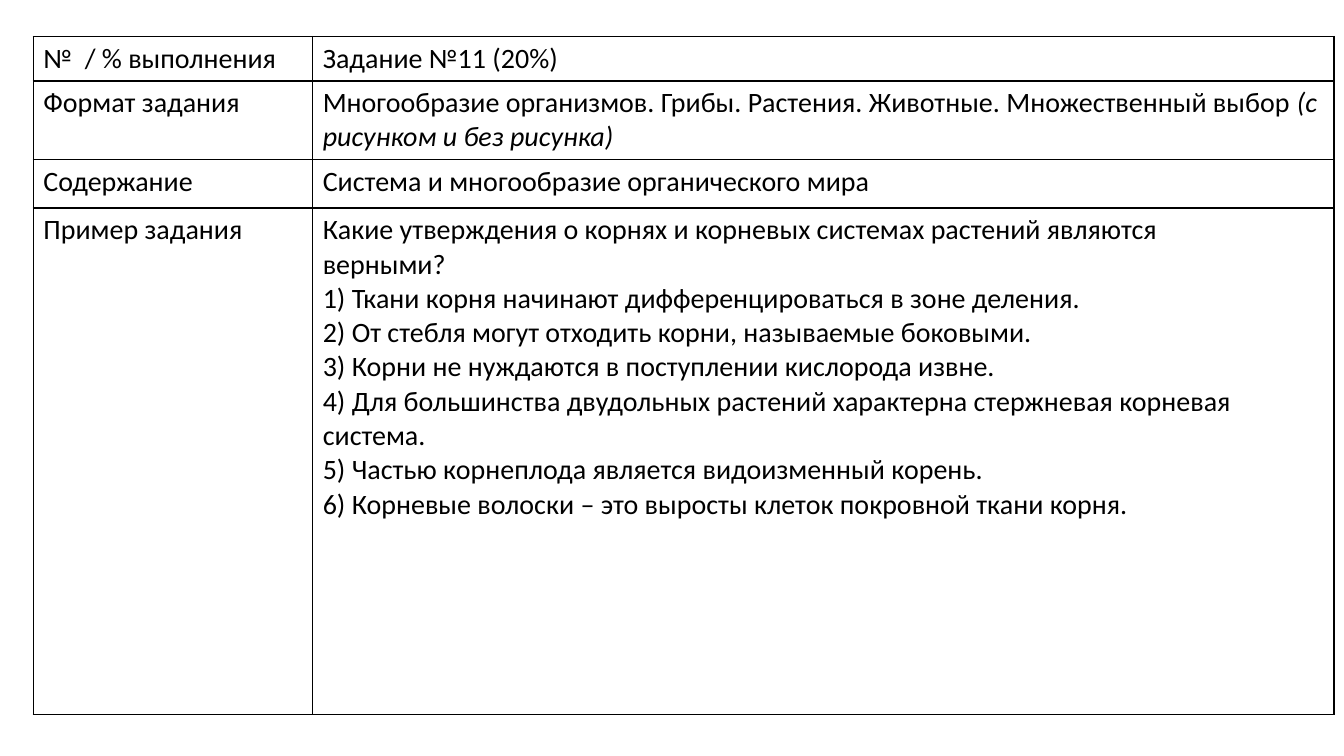
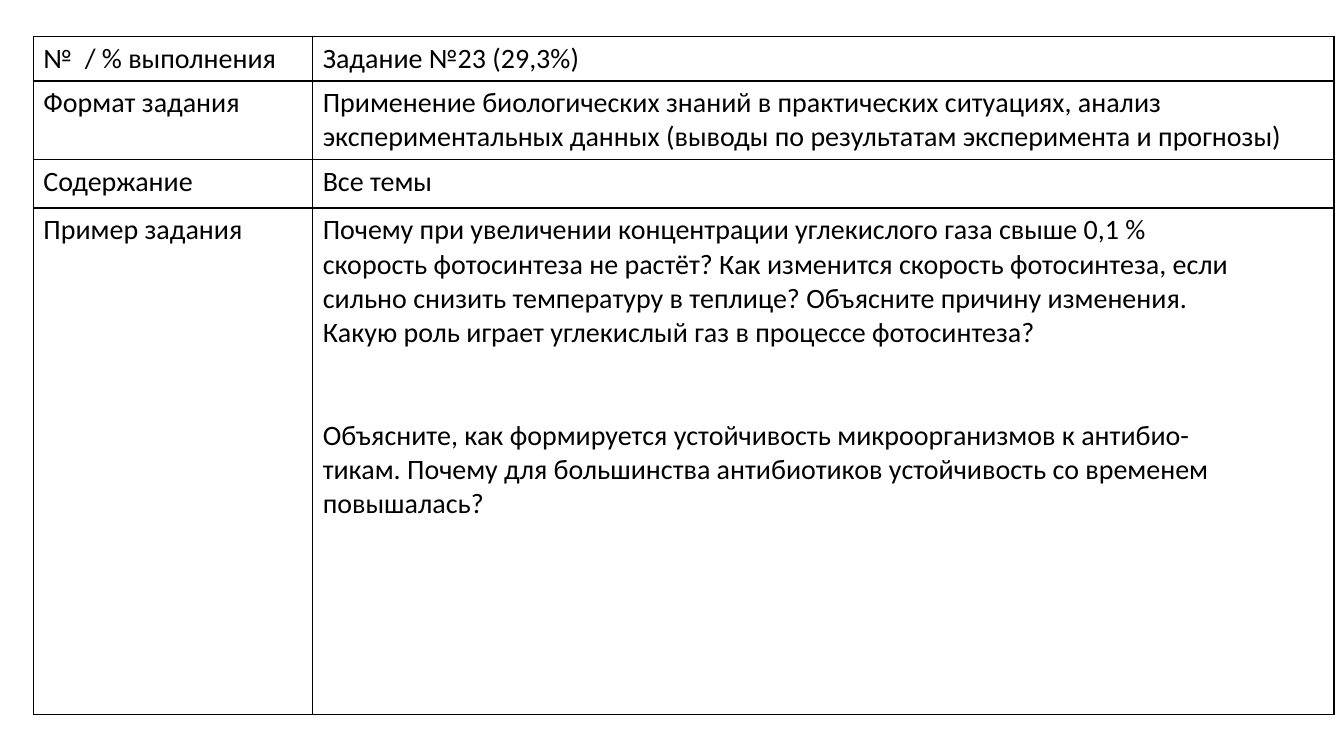
from dataclasses import dataclass

from lxml import etree
from pptx import Presentation
from pptx import util as u
from pptx.dml.color import RGBColor
from pptx.oxml import ns

BLACK = RGBColor(0x00, 0x00, 0x00)
FONT = "Calibri"
FONT_SIZE = u.Pt(20)
BORDER_WIDTH = u.Pt(1)
PARAGRAPH_GAP = u.Pt(48.8)

TABLE_LEFT, TABLE_TOP = u.Cm(0.84), u.Cm(0.92)
COLUMN_WIDTHS = (u.Cm(7.04), u.Cm(25.74))
ROW_HEIGHTS = (u.Cm(1.05), u.Cm(1.95), u.Cm(1.22), u.Cm(12.77))
ROW_LABELS = ("№  / % выполнения", "Формат задания", "Содержание", "Пример задания")


@dataclass(frozen=True)
class Line:
    text: str
    italic_ending: str = ""
    gap_before: bool = False


@dataclass(frozen=True)
class Task:
    number: Line
    task_format: Line
    content: Line
    example: tuple[Line, ...]

    def rows(self) -> list[tuple[Line, ...]]:
        return [(self.number,), (self.task_format,), (self.content,), self.example]


TASKS = (
    Task(
        number=Line("Задание №11 (20%)"),
        task_format=Line(
            "Многообразие организмов. Грибы. Растения. Животные. Множественный выбор ",
            italic_ending="(с рисунком и без рисунка)",
        ),
        content=Line("Система и многообразие органического мира"),
        example=(
            Line("Какие утверждения о корнях и корневых системах растений являются"),
            Line("верными?"),
            Line("1) Ткани корня начинают дифференцироваться в зоне деления."),
            Line("2) От стебля могут отходить корни, называемые боковыми."),
            Line("3) Корни не нуждаются в поступлении кислорода извне."),
            Line("4) Для большинства двудольных растений характерна стержневая корневая"),
            Line("система."),
            Line("5) Частью корнеплода является видоизменный корень."),
            Line("6) Корневые волоски – это выросты клеток покровной ткани корня."),
        ),
    ),
    Task(
        number=Line("Задание №23 (29,3%)"),
        task_format=Line(
            "Применение биологических знаний в практических ситуациях, анализ "
            "экспериментальных данных (выводы по результатам эксперимента и прогнозы)"
        ),
        content=Line("Все темы"),
        example=(
            Line("Почему при увеличении концентрации углекислого газа свыше 0,1 %"),
            Line("скорость фотосинтеза не растёт? Как изменится скорость фотосинтеза, если"),
            Line("сильно снизить температуру в теплице? Объясните причину изменения."),
            Line("Какую роль играет углекислый газ в процессе фотосинтеза?"),
            Line(
                "Объясните, как формируется устойчивость микроорганизмов к антибио-",
                gap_before=True,
            ),
            Line("тикам. Почему для большинства антибиотиков устойчивость со временем"),
            Line("повышалась?"),
        ),
    ),
)


def add_borders(cell) -> None:
    properties = cell._tc.get_or_add_tcPr()
    for side in ("a:lnL", "a:lnR", "a:lnT", "a:lnB"):
        border = etree.SubElement(properties, ns.qn(side), w=str(int(BORDER_WIDTH)))
        fill = etree.SubElement(border, ns.qn("a:solidFill"))
        etree.SubElement(fill, ns.qn("a:srgbClr"), val=str(BLACK))


def fill_cell(cell, lines: tuple[Line, ...]) -> None:
    add_borders(cell)
    cell.fill.background()
    cell.text_frame.text = "\n".join(line.text for line in lines)
    for paragraph, line in zip(cell.text_frame.paragraphs, lines):
        if line.gap_before:
            paragraph.space_before = PARAGRAPH_GAP
        if line.italic_ending:
            ending = paragraph.add_run()
            ending.text = line.italic_ending
            ending.font.italic = True
        for run in paragraph.runs:
            run.font.name = FONT
            run.font.size = FONT_SIZE
            run.font.color.rgb = BLACK


def add_task_slide(presentation, task: Task) -> None:
    slide = presentation.slides.add_slide(presentation.slide_layouts[6])
    table = slide.shapes.add_table(
        len(ROW_HEIGHTS), len(COLUMN_WIDTHS), TABLE_LEFT, TABLE_TOP,
        sum(COLUMN_WIDTHS), sum(ROW_HEIGHTS),
    ).table
    table.first_row = table.horz_banding = False
    for column, width in zip(table.columns, COLUMN_WIDTHS):
        column.width = width
    for row, height, label, lines in zip(table.rows, ROW_HEIGHTS, ROW_LABELS, task.rows()):
        row.height = height
        fill_cell(row.cells[0], (Line(label),))
        fill_cell(row.cells[1], lines)


def main() -> None:
    presentation = Presentation()
    presentation.slide_width, presentation.slide_height = u.Cm(33.87), u.Cm(19.05)
    for task in TASKS:
        add_task_slide(presentation, task)
    presentation.save("out.pptx")


if __name__ == "__main__":
    main()
